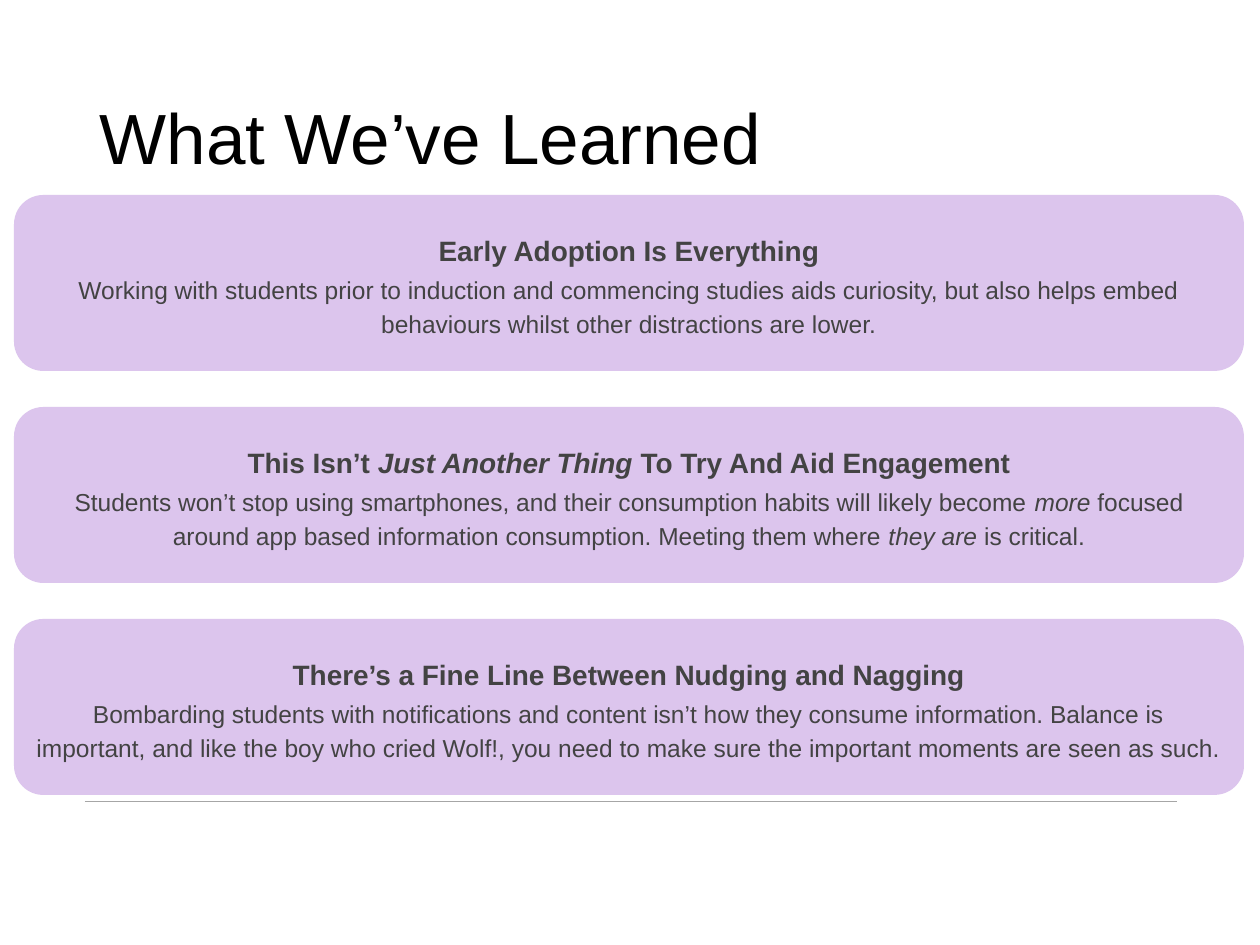
from lxml import etree
from pptx import Presentation
from pptx.dml.color import RGBColor
from pptx.enum.shapes import MSO_CONNECTOR, MSO_SHAPE
from pptx.enum.text import MSO_ANCHOR, MSO_AUTO_SIZE, PP_ALIGN
from pptx.oxml.ns import qn
from pptx.util import Emu, Pt

ROUNDED = MSO_SHAPE.ROUNDED_RECTANGLE
STRAIGHT = MSO_CONNECTOR.STRAIGHT
MIDDLE = MSO_ANCHOR.MIDDLE
LEFT, CENTER = PP_ALIGN.LEFT, PP_ALIGN.CENTER
NO_AUTOFIT = MSO_AUTO_SIZE.NONE

PX_PER_INCH = 126
TITLE_ONLY = 5
CARD_TOP, CARD_PITCH = 195, 212

# Words between asterisks are set in italics.
LESSONS = [
    ("Early Adoption Is Everything",
     "Working with students prior to induction and commencing studies aids curiosity, "
     "but also helps embed behaviours whilst other distractions are lower."),
    ("This Isn’t *Just Another Thing *To Try And Aid Engagement",
     "Students won’t stop using smartphones, and their consumption habits will likely "
     "become *more* focused around app based information consumption. "
     "Meeting them where *they are* is critical."),
    ("There’s a Fine Line Between Nudging and Nagging",
     "Bombarding students with notifications and content isn’t how they consume "
     "information. Balance is important, and like the boy who cried Wolf!, you need to "
     "make sure the important moments are seen as such."),
]


def px(length):
    return Emu(round(length * 914400 / PX_PER_INCH))


def color(hex_code):
    return RGBColor.from_string(hex_code)


prs = Presentation()
prs.slide_width, prs.slide_height = px(1260), px(945)
slide = prs.slides.add_slide(prs.slide_layouts[TITLE_ONLY])

rule = slide.shapes.add_connector(STRAIGHT, px(85), px(801), px(1177), px(801))
rule.line.color.rgb = color("A6A6A6")
rule.line.width = Pt(0.5)
etree.SubElement(rule._element.spPr, qn("a:effectLst"))

title = slide.shapes.title
title.left, title.top, title.width, title.height = px(87), px(50), px(1086), px(183)
title.text_frame.text = "What We’ve Learned"
title.text_frame.auto_size = NO_AUTOFIT
title.text_frame.vertical_anchor = MIDDLE
heading = title.text_frame.paragraphs[0]
heading.alignment = LEFT
heading.line_spacing = 0.9
heading.font.name = "Arial"
heading.font.size = Pt(40.6)
heading.font.color.rgb = color("000000")

for row, (lesson, explanation) in enumerate(LESSONS):
    card = slide.shapes.add_shape(
        ROUNDED, px(14), px(CARD_TOP + row * CARD_PITCH), px(1230), px(176))
    card.shadow.inherit = False
    card.fill.solid()
    card.fill.fore_color.rgb = color("DCC5ED")
    card.line.fill.background()

    frame = card.text_frame
    frame.word_wrap = True
    frame.vertical_anchor = MIDDLE
    frame.margin_left = frame.margin_right = px(13)
    frame.margin_top = frame.margin_bottom = px(13)

    lesson_line = frame.paragraphs[0]
    lesson_line.line_spacing = 1.2
    explanation_line = frame.add_paragraph()
    explanation_line.line_spacing = 1.15
    explanation_line.space_before = Pt(2)

    for paragraph, wording, size, bold in (
            (lesson_line, lesson, 16, True), (explanation_line, explanation, 14, False)):
        paragraph.alignment = CENTER
        for part, words in enumerate(wording.split("*")):
            run = paragraph.add_run()
            run.text = words
            run.font.name = "Arial"
            run.font.size = Pt(size)
            run.font.bold = bold
            run.font.italic = part % 2 == 1
            run.font.color.rgb = color("434343")

prs.save("out.pptx")
